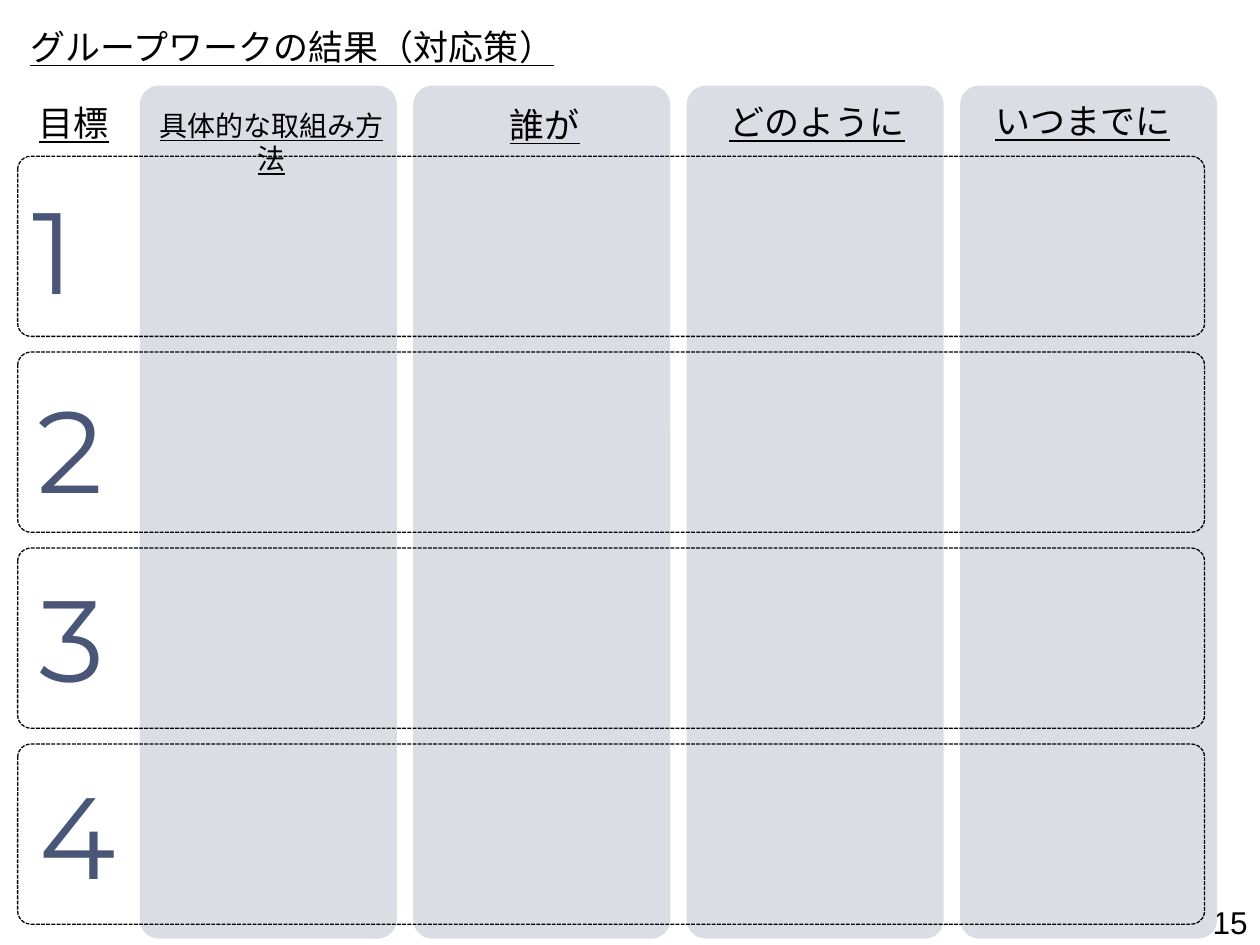
from pptx import Presentation
from pptx.dml.color import RGBColor
from pptx.enum.dml import MSO_LINE
from pptx.enum.shapes import MSO_SHAPE
from pptx.enum.text import MSO_ANCHOR, MSO_AUTO_SIZE, PP_ALIGN
from pptx.oxml.ns import qn
from pptx.util import Inches, Pt

JAPANESE = "Noto Sans CJK JP"
BLACK, NAVY, GREY = "000000", "495677", "DBDDE4"
CORNER = 0.074

# Grid: four grey columns crossed by four dashed rows
COLUMN_LEFT, COLUMN_TOP, COLUMN_PITCH = 1.11, 0.68, 2.17
COLUMN_WIDTH, COLUMN_HEIGHT = 2.04, 6.77
ROW_LEFT, ROW_TOP, ROW_PITCH = 0.14, 1.24, 1.555
ROW_WIDTH, ROW_HEIGHT = 9.42, 1.43

HEADERS = [  # text, left, top, width, size
    ("目標", 0.12, 0.76, 0.93, 20),
    ("具体的な取組み方法", 1.06, 0.81, 2.19, 16),
    ("誰が", 3.26, 0.77, 2.13, 20),
    ("どのように", 5.42, 0.75, 2.13, 20),
    ("いつまでに", 7.53, 0.74, 2.13, 20),
]
GOALS = [("1", 0.26, 1.42), ("2", 0.3, 3), ("3", 0.31, 4.5), ("4", 0.31, 6.06)]

NO_MARGINS = dict.fromkeys(
    ("margin_left", "margin_top", "margin_right", "margin_bottom"), 0)


def color(hex_value):
    return RGBColor.from_string(hex_value)


def apply(target, values):
    for name, value in values.items():
        setattr(target, name, value)


def box(left, top, width, height):
    return [Inches(length) for length in (left, top, width, height)]


def write(holder, text, size, font=JAPANESE, ink=BLACK, underline=False,
          align=PP_ALIGN.LEFT, **frame_format):
    """Put one formatted line of text into a text box or placeholder."""
    frame = holder.text_frame
    apply(frame, {"word_wrap": True, "vertical_anchor": MSO_ANCHOR.TOP,
                  **frame_format})
    paragraph = frame.paragraphs[0]
    paragraph.alignment = align
    run = paragraph.add_run()
    run.text = text
    apply(run.font, {"size": Pt(size), "name": font, "underline": underline})
    run.font.color.rgb = color(ink)
    # East Asian characters take their own typeface
    east_asian = run.font._element.makeelement(qn("a:ea"), {"typeface": font})
    run.font._element.find(qn("a:latin")).addnext(east_asian)


def add_text(slide, text, area, size, **text_format):
    write(slide.shapes.add_textbox(*box(*area)), text, size, **text_format)


def add_panel(slide, area):
    panel = slide.shapes.add_shape(MSO_SHAPE.ROUNDED_RECTANGLE, *box(*area))
    panel.adjustments[0] = CORNER
    panel.shadow.inherit = False
    return panel


def add_column(slide, index):
    column = add_panel(slide, (COLUMN_LEFT + index * COLUMN_PITCH, COLUMN_TOP,
                               COLUMN_WIDTH, COLUMN_HEIGHT))
    column.fill.solid()
    column.fill.fore_color.rgb = color(GREY)
    column.line.fill.background()


def add_row(slide, index):
    row = add_panel(slide, (ROW_LEFT, ROW_TOP + index * ROW_PITCH,
                            ROW_WIDTH, ROW_HEIGHT))
    row.fill.background()
    row.line.color.rgb = color(BLACK)
    apply(row.line, {"width": Pt(0.75), "dash_style": MSO_LINE.SQUARE_DOT})


def add_title(slide, text):
    title = slide.shapes.title
    apply(title, dict(zip(("left", "top", "width", "height"),
                          box(0.14, 0.15, 8.93, 0.44))))
    write(title, text, 20, underline=True,
          auto_size=MSO_AUTO_SIZE.SHAPE_TO_FIT_TEXT)


def main():
    deck = Presentation()
    apply(deck, {"slide_width": Inches(10), "slide_height": Inches(7.5)})
    slide = deck.slides.add_slide(deck.slide_layouts[5])

    # Title and page number
    add_title(slide, "グループワークの結果（対応策）")
    add_text(slide, "15", (8.91, 7.14, 1.09, 0.36), 18, font="Arial",
             align=PP_ALIGN.RIGHT, vertical_anchor=MSO_ANCHOR.MIDDLE)

    # Goal numbers
    for number, left, top in GOALS:
        add_text(slide, number, (left, top, 0.62, 1.11), 66,
                 font="Montserrat", ink=NAVY,
                 **{**NO_MARGINS, "word_wrap": False})

    # Columns, then the rows across them
    for index in range(len(HEADERS) - 1):
        add_column(slide, index)
    for index in range(len(GOALS)):
        add_row(slide, index)

    # Column headers
    for text, left, top, width, size in HEADERS:
        height = 0.44 if size == 20 else 0.37
        add_text(slide, text, (left, top, width, height), size,
                 underline=True, align=PP_ALIGN.CENTER,
                 auto_size=MSO_AUTO_SIZE.SHAPE_TO_FIT_TEXT)

    deck.save("out.pptx")


if __name__ == "__main__":
    main()
